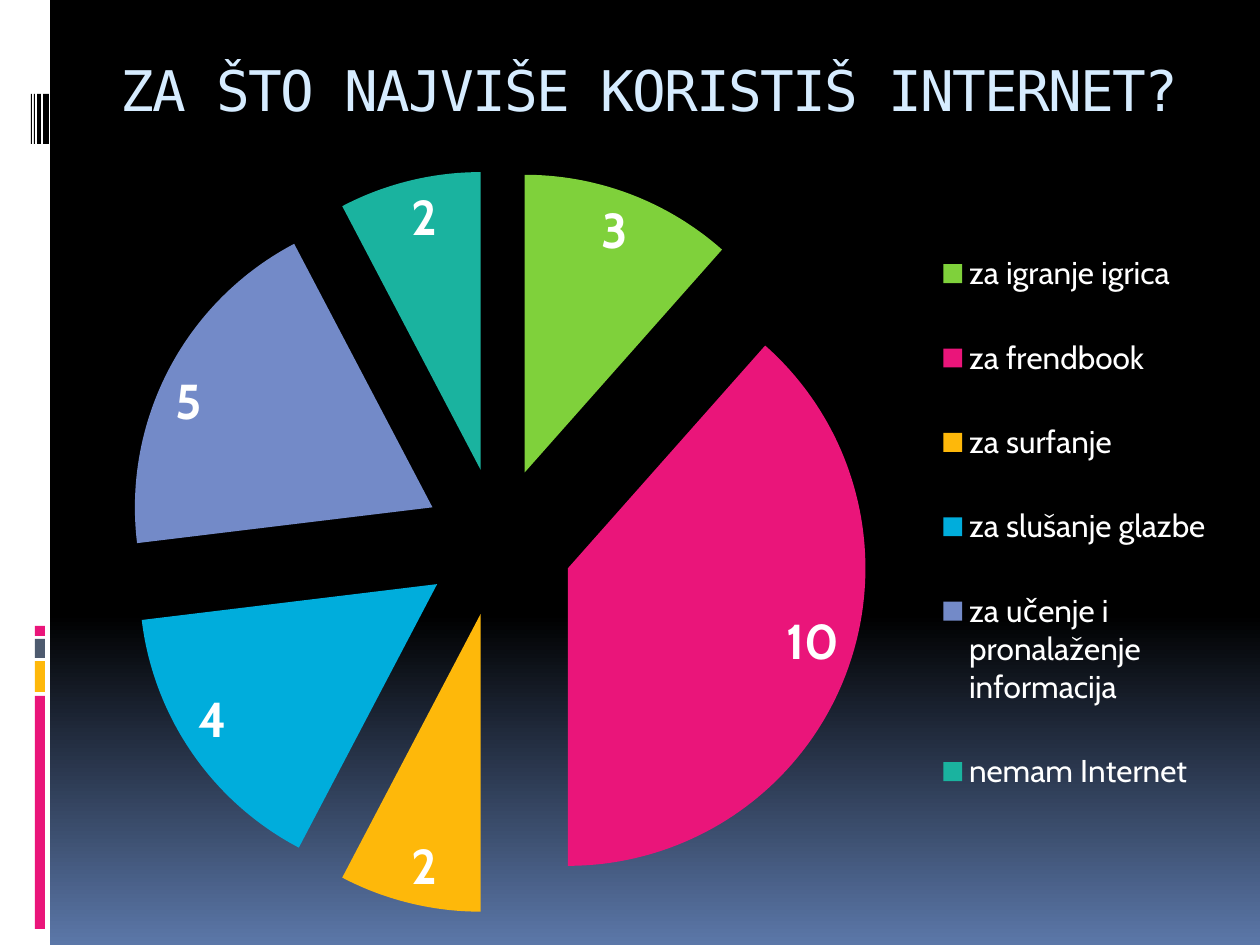
from dataclasses import dataclass

from lxml.etree import SubElement
from pptx import Presentation
from pptx.chart.data import CategoryChartData
from pptx.dml.color import RGBColor
from pptx.enum.chart import XL_CHART_TYPE, XL_LABEL_POSITION, XL_LEGEND_POSITION
from pptx.enum.shapes import MSO_SHAPE
from pptx.enum.text import MSO_ANCHOR, MSO_AUTO_SIZE, PP_ALIGN
from pptx.oxml.ns import qn
from pptx.util import Emu, Pt

EMU_PER_PX = 914400 / 126


@dataclass(frozen=True)
class Theme:
    white: str = "FFFFFF"
    black: str = "000000"
    slate: str = "4E5B6F"
    horizon: str = "5B77A8"
    title: str = "D6ECFF"
    pink: str = "EA157A"
    amber: str = "FEB80A"
    green: str = "7FD13B"
    cyan: str = "00ADDC"
    blue: str = "738AC8"
    teal: str = "1AB39F"
    title_font: str = "DejaVu Sans Mono"
    body_font: str = "Cabin"
    title_size: int = 32
    legend_size: int = 18
    label_size: int = 28


THEME = Theme()

# Category, value, slice colour
ANSWERS = [
    ("za igranje igrica", 3, THEME.green),
    ("za frendbook", 10, THEME.pink),
    ("za surfanje", 2, THEME.amber),
    ("za slušanje glazbe", 4, THEME.cyan),
    ("za učenje i pronalaženje informacija", 5, THEME.blue),
    ("nemam Internet", 2, THEME.teal),
]

# Left, top, width, height, colour
SIDE_BAND = (0, 0, 50, 945, THEME.white)
COLOUR_BARS = [(35, top, 10, height, colour) for top, height, colour in (
    (696, 233, THEME.pink), (661, 31, THEME.amber),
    (639, 19, THEME.slate), (626, 10, THEME.pink))]
BARCODE = [(left, 94, width, 50, THEME.black)
           for left, width in ((43, 6), (37, 4), (34, 1), (31, 1))]


def px(value):
    return Emu(round(value * EMU_PER_PX))


def rgb(value):
    return RGBColor.from_string(value)


def style_font(font, name, size, colour, bold=False):
    font.name = name
    font.size = Pt(size)
    font.bold = bold
    font.color.rgb = rgb(colour)


def set_background(slide):
    fill = slide.background.fill
    fill.gradient()
    fill.gradient_angle = 270
    stops = ((0.65, THEME.black), (1, THEME.horizon))
    for stop, (position, colour) in zip(fill.gradient_stops, stops):
        stop.position = position
        stop.color.rgb = rgb(colour)


def add_bar(slide, left, top, width, height, colour):
    shape = slide.shapes.add_shape(
        MSO_SHAPE.RECTANGLE, px(left), px(top), px(width), px(height))
    shape.shadow.inherit = False
    shape.fill.solid()
    shape.fill.fore_color.rgb = rgb(colour)
    shape.line.fill.background()


def set_title(slide, text):
    title = slide.shapes.title
    title.left, title.top, title.width, title.height = map(px, (108, 49, 1113, 126))
    frame = title.text_frame
    frame.word_wrap = True
    frame.auto_size = MSO_AUTO_SIZE.NONE
    frame.vertical_anchor = MSO_ANCHOR.TOP
    paragraph = frame.paragraphs[0]
    paragraph.alignment = PP_ALIGN.LEFT
    run = paragraph.add_run()
    run.text = text
    style_font(run.font, THEME.title_font, THEME.title_size, THEME.title)
    run.font._element.set("spc", "-100")


def set_layout(parent, before, left, top, width, height, inner=False):
    """Place a chart part by fractions of the chart area."""
    for old in parent.findall(qn("c:layout")):
        parent.remove(old)
    layout = SubElement(parent, qn("c:layout"))
    manual = SubElement(layout, qn("c:manualLayout"))
    settings = [("layoutTarget", "inner")] if inner else []
    settings += [("xMode", "edge"), ("yMode", "edge"),
                 ("x", left), ("y", top), ("w", width), ("h", height)]
    for tag, value in settings:
        SubElement(manual, qn(f"c:{tag}")).set("val", str(value))
    parent.find(qn(before)).addprevious(layout)


def add_answer_pie(slide):
    names, values, colours = zip(*ANSWERS)
    data = CategoryChartData()
    data.categories = names
    data.add_series("Series 1", values)
    chart = slide.shapes.add_chart(
        XL_CHART_TYPE.PIE_EXPLODED, px(78), px(147), px(1152), px(767), data).chart
    chart.has_title = False
    style_font(chart.font, THEME.body_font, THEME.legend_size, THEME.white)

    # Slices
    plot = chart.plots[0]
    plot.vary_by_categories = True
    series = plot.series[0]
    for index, colour in enumerate(colours):
        slice_format = series.points[index].format
        slice_format.fill.solid()
        slice_format.fill.fore_color.rgb = rgb(colour)
        slice_format.line.fill.background()
        point = series.points[index].format._element
        explosion = point.find(qn("c:explosion"))
        if explosion is None:
            explosion = SubElement(point, qn("c:explosion"))
            point.find(qn("c:spPr")).addprevious(explosion)
        explosion.set("val", "25")

    # Value labels
    plot.has_data_labels = True
    labels = plot.data_labels
    labels.show_value = True
    labels.show_percentage = False
    labels.position = XL_LABEL_POSITION.INSIDE_END
    style_font(labels.font, THEME.body_font, THEME.label_size, THEME.white, bold=True)

    # Legend and plot placement
    chart.has_legend = True
    legend = chart.legend
    legend.position = XL_LEGEND_POSITION.RIGHT
    legend.include_in_layout = False
    style_font(legend.font, THEME.body_font, THEME.legend_size, THEME.white)
    set_layout(legend._element, "c:overlay", 0.74, 0.08, 0.25, 0.82)
    plot_area = chart._chartSpace.chart.plotArea
    set_layout(plot_area, "c:pieChart", 0.02, 0.03, 0.69, 0.97, inner=True)


def main():
    presentation = Presentation()
    presentation.slide_width, presentation.slide_height = px(1260), px(945)
    slide = presentation.slides.add_slide(presentation.slide_layouts[5])
    set_background(slide)
    for bar in [SIDE_BAND, *COLOUR_BARS, *BARCODE]:
        add_bar(slide, *bar)
    set_title(slide, "ZA ŠTO NAJVIŠE KORISTIŠ INTERNET?")
    add_answer_pie(slide)
    presentation.save("out.pptx")


if __name__ == "__main__":
    main()
